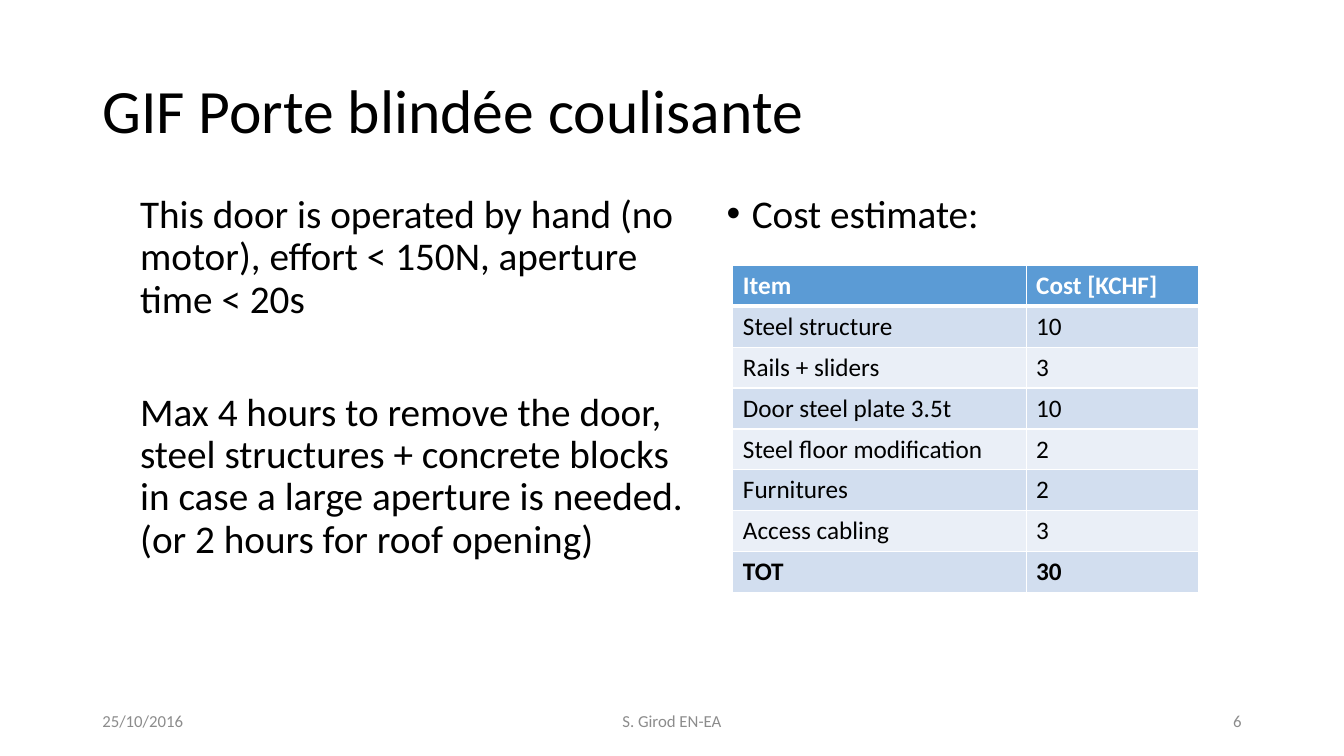
from lxml.etree import SubElement
from pptx import Presentation
from pptx.dml.color import RGBColor
from pptx.enum.text import MSO_ANCHOR, PP_ALIGN
from pptx.oxml.ns import qn
from pptx.util import Pt

COLOURS = {
    "text": "000000",
    "footer": "8C8C8C",
    "white": "FFFFFF",
    "header": "5B9BD5",
    "odd_row": "D2DEEF",
    "even_row": "EAEFF7",
}
COSTS = [
    ("Item", "Cost [KCHF]"),
    ("Steel structure", "10"),
    ("Rails + sliders", "3"),
    ("Door steel plate 3.5t", "10"),
    ("Steel floor modification", "2"),
    ("Furnitures", "2"),
    ("Access cabling", "3"),
    ("TOT", "30"),
]


class SlideBuilder:
    font = "Calibri"

    def __init__(self, slide):
        self.slide = slide

    def colour(self, name):
        return RGBColor.from_string(COLOURS[name])

    def run(self, paragraph, text, size, colour="text", bold=False):
        run = paragraph.add_run()
        run.text = text
        run.font.name = self.font
        run.font.size = Pt(size)
        run.font.bold = bold
        run.font.color.rgb = self.colour(colour)

    def text(self, box, paragraphs, size, colour="text", anchor=MSO_ANCHOR.TOP,
             align=PP_ALIGN.LEFT, line_spacing=1.0, bullet=False):
        """Add a text box; paragraphs are pairs of text and space before."""
        frame = self.slide.shapes.add_textbox(*map(Pt, box)).text_frame
        frame.word_wrap = True
        frame.vertical_anchor = anchor
        for index, (text, space_before) in enumerate(paragraphs):
            paragraph = frame.add_paragraph() if index else frame.paragraphs[0]
            paragraph.alignment = align
            paragraph.line_spacing = line_spacing
            paragraph.space_before = Pt(space_before)
            if bullet:
                self.bullet(paragraph)
            self.run(paragraph, text, size, colour)

    def bullet(self, paragraph):
        properties = paragraph._p.get_or_add_pPr()
        properties.set("marL", str(Pt(18)))
        properties.set("indent", str(-Pt(18)))
        SubElement(properties, qn("a:buFont")).set("typeface", "Arial")
        SubElement(properties, qn("a:buChar")).set("char", "•")

    def borders(self, cell, widths):
        properties = cell._tc.get_or_add_tcPr()
        for side, width in widths.items():
            line = SubElement(properties, qn(f"a:ln{side}"), w=str(Pt(width)))
            fill = SubElement(line, qn("a:solidFill"))
            SubElement(fill, qn("a:srgbClr")).set("val", COLOURS["white"])

    def table(self, box, rows, column_widths, size):
        table = self.slide.shapes.add_table(
            len(rows), len(column_widths), *map(Pt, box)).table
        for column, width in zip(table.columns, column_widths):
            column.width = Pt(width)
        last = len(rows) - 1
        for r, row in enumerate(rows):
            table.rows[r].height = Pt(box[3] / len(rows))
            background = "header" if r == 0 else "odd_row" if r % 2 else "even_row"
            for c, text in enumerate(row):
                cell = table.cell(r, c)
                self.borders(cell, {"L": 1, "R": 1, "T": 3 if r == 1 else 1,
                                    "B": 3 if r == 0 else 1})
                cell.fill.solid()
                cell.fill.fore_color.rgb = self.colour(background)
                self.run(cell.text_frame.paragraphs[0], text, size,
                         "text" if r else "white", bold=r in (0, last))


def main():
    deck = Presentation()
    deck.slide_width, deck.slide_height = Pt(960), Pt(540)
    builder = SlideBuilder(deck.slides.add_slide(deck.slide_layouts[6]))

    # Title
    builder.text((66, 28.75, 828, 104.4), [("GIF Porte blindée coulisante", 0)], 44,
                 anchor=MSO_ANCHOR.MIDDLE, line_spacing=0.9)

    # Cost estimate
    builder.text((512, 135.5, 382, 342.6), [("Cost estimate:", 10)], 28,
                 line_spacing=0.9, bullet=True)
    builder.table((523.5, 189.5, 332.6, 234), COSTS, (209.5, 123.1), 18)

    # Door operation and removal
    builder.text((93, 135.5, 411, 342.6), [
        ("This door is operated by hand (no motor), effort < 150N, "
         "aperture time < 20s", 10),
        ("Max 4 hours to remove the door, steel structures + concrete blocks "
         "in case a large aperture is needed. (or 2 hours for roof opening)", 50.5),
    ], 28, line_spacing=0.9)

    # Footer
    for left, width, text, align in (
        (66, 216, "25/10/2016", PP_ALIGN.LEFT),
        (318, 324, "S. Girod EN-EA", PP_ALIGN.CENTER),
        (678, 216, "6", PP_ALIGN.RIGHT),
    ):
        builder.text((left, 500.5, width, 28.75), [(text, 0)], 12, "footer",
                     MSO_ANCHOR.MIDDLE, align)

    deck.save("out.pptx")


if __name__ == "__main__":
    main()
